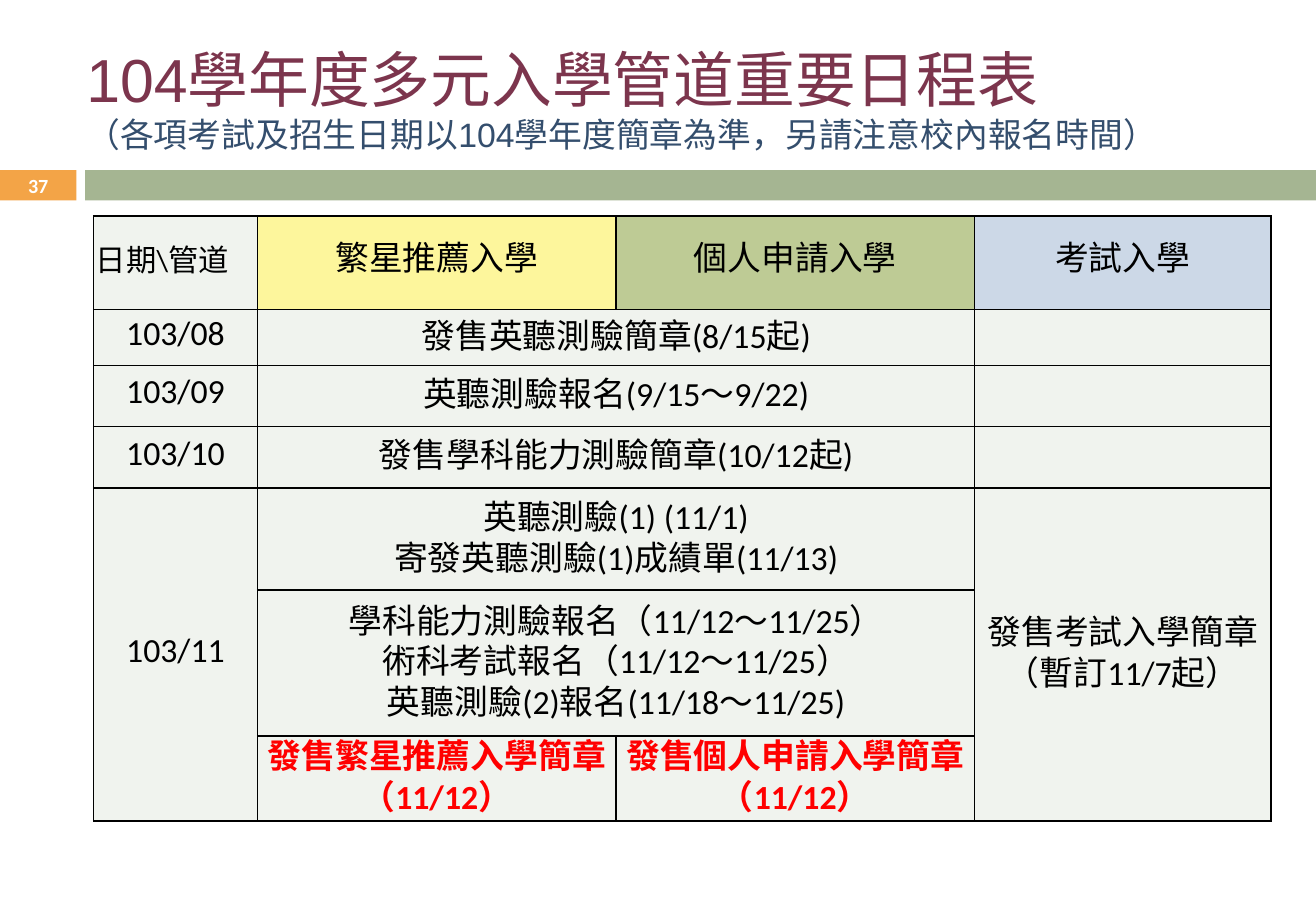
from lxml.etree import SubElement
from pptx import Presentation
from pptx.dml.color import RGBColor
from pptx.enum.shapes import MSO_SHAPE
from pptx.enum.text import MSO_ANCHOR, MSO_AUTO_SIZE, PP_ALIGN
from pptx.oxml.ns import qn
from pptx.util import Inches, Pt


def paint(target, color):
    if hasattr(target, "solid"):
        target.solid()
        target = target.fore_color
    target.rgb = RGBColor.from_string(color)


def style(par, size, font, color, bold=False, align=PP_ALIGN.CENTER):
    par.alignment = align
    for run in par.runs:
        run.font.size = Pt(size)
        run.font.name = font
        run.font.bold = bold
        paint(run.font.color, color)


deck = Presentation()
deck.slide_width, deck.slide_height = Inches(10.83), Inches(7.5)
slide = deck.slides.add_slide(deck.slide_layouts[5])

for left, width, color in [(0, 0.63, "F3A447"), (0.7, 10.13, "A5B592")]:
    bar = slide.shapes.add_shape(MSO_SHAPE.RECTANGLE, Inches(left), Inches(1.4),
                                 Inches(width), Inches(0.25))
    bar.shadow.inherit = False
    paint(bar.fill, color)
    bar.line.fill.background()

title = slide.shapes.title
title.left, title.top = Inches(0.61), Inches(0.29)
title.width, title.height = Inches(9.76), Inches(1.34)
frame = title.text_frame
frame.text = "104學年度多元入學管道重要日程表\n（各項考試及招生日期以104學年度簡章為準，另請注意校內報名時間）"
frame.auto_size = MSO_AUTO_SIZE.NONE
frame.vertical_anchor = MSO_ANCHOR.TOP
for par, size, color in zip(frame.paragraphs, (36, 20), ("7C354D", "344E6D")):
    style(par, size, "Arial", color, align=PP_ALIGN.LEFT)
    par.space_before = Pt(0)

page = slide.shapes.add_textbox(Inches(0), Inches(1.39), Inches(0.63), Inches(0.27))
frame = page.text_frame
frame.word_wrap = True
frame.margin_top = frame.margin_bottom = 0
frame.vertical_anchor = MSO_ANCHOR.MIDDLE
frame.text = "37"
style(frame.paragraphs[0], 11.9, "Calibri", "FFFFFF", True)

rows = [
    ["日期\\管道", "繁星推薦入學", "個人申請入學", "考試入學"],
    ["103/08", "發售英聽測驗簡章(8/15起)", "", ""],
    ["103/09", "英聽測驗報名(9/15～9/22)", "", ""],
    ["103/10", "發售學科能力測驗簡章(10/12起)", "", ""],
    ["103/11", "英聽測驗(1) (11/1)\n寄發英聽測驗(1)成績單(11/13)", "",
     "發售考試入學簡章（暫訂11/7起）"],
    ["", "學科能力測驗報名（11/12～11/25）\n術科考試報名（11/12～11/25）\n"
     "英聽測驗(2)報名(11/18～11/25)", "", ""],
    ["", "發售繁星推薦入學簡章（11/12）", "發售個人申請入學簡章（11/12）", ""],
]
widths = [1.35, 2.95, 2.95, 2.44]
heights = [0.77, 0.46, 0.5, 0.51, 0.84, 1.2, 0.7]
heads = ["F0F3EE", "FDF69C", "BECB95", "CCD8E7"]

table = slide.shapes.add_table(len(rows), len(widths), Inches(0.77), Inches(1.78),
                               Inches(sum(widths)), Inches(sum(heights))).table
table.first_row = table.horz_banding = False
for col, width in zip(table.columns, widths):
    col.width = Inches(width)
for row, height in zip(table.rows, heights):
    row.height = Inches(height)

for r, texts in enumerate(rows):
    for c, text in enumerate(texts):
        cell = table.cell(r, c)
        cell.margin_left = cell.margin_right = Inches(0.02)
        cell.margin_top = cell.margin_bottom = 0
        cell.vertical_anchor = MSO_ANCHOR.MIDDLE
        props = cell._tc.get_or_add_tcPr()
        for side in ("lnL", "lnR", "lnT", "lnB"):
            edge = SubElement(props, qn("a:" + side), w=str(Pt(1)))
            fill = SubElement(edge, qn("a:solidFill"))
            SubElement(fill, qn("a:srgbClr"), val="000000")
        paint(cell.fill, heads[c] if r == 0 else "F0F3EE")
        if not text:
            continue
        cell.text_frame.text = text
        corner = r == c == 0
        last = r == len(rows) - 1
        for par in cell.text_frame.paragraphs:
            style(par, 18 if corner else 20, "Calibri", "FF0000" if last else "000000",
                  last, PP_ALIGN.LEFT if corner else PP_ALIGN.CENTER)
            par.line_spacing = Pt(20 if r == 0 or c == 0 else 24)

for r in range(1, 6):
    table.cell(r, 1).merge(table.cell(r, 2))
for c in (0, 3):
    table.cell(4, c).merge(table.cell(6, c))

deck.save("out.pptx")
